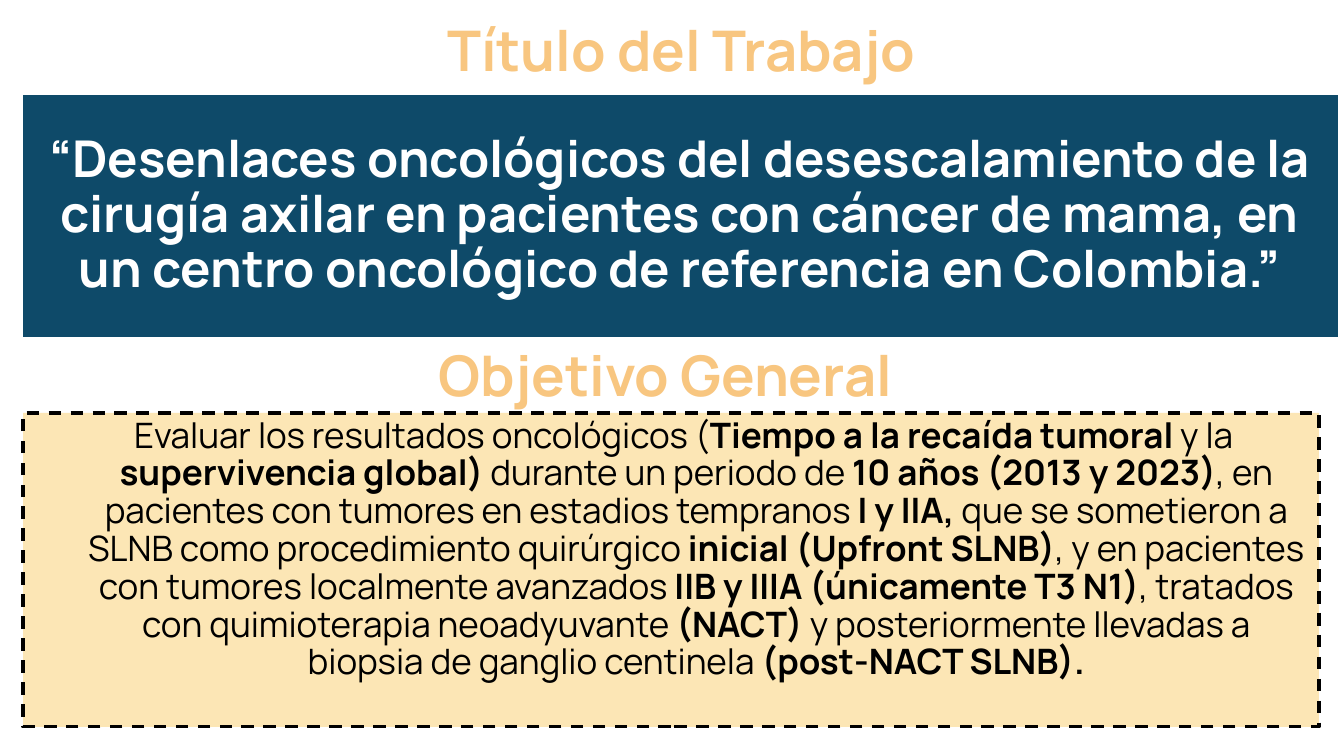
from pptx import Presentation
from pptx.dml.color import RGBColor
from pptx.enum.dml import MSO_LINE
from pptx.enum.shapes import MSO_SHAPE
from pptx.enum.text import MSO_ANCHOR, MSO_AUTO_SIZE, PP_ALIGN
from pptx.util import Emu, Pt

RECT, DASH = MSO_SHAPE.RECTANGLE, MSO_LINE.DASH
TOP, MIDDLE = MSO_ANCHOR.TOP, MSO_ANCHOR.MIDDLE
LEFT, CENTER = PP_ALIGN.LEFT, PP_ALIGN.CENTER
NO_FIT = MSO_AUTO_SIZE.NONE

FONT = "Manrope"
COLORS = {"navy": "0E4A69", "cream": "FCE6B5", "gold": "F8C680",
          "black": "000000", "white": "FFFFFF"}

TITLE = ("“Desenlaces oncológicos del desescalamiento de la cirugía axilar en pacientes "
         "con cáncer de mama, en un centro oncológico de referencia en Colombia.”")
TITLE_BOX = (23, 95, 1315, 242)

# Regular and bold runs alternate, starting with regular
OBJECTIVE = [
    "Evaluar los resultados oncológicos (", "Tiempo a la recaída tumoral",
    " y la", " supervivencia global)",
    " durante un periodo de ", "10 años (2013 y 2023)",
    ", en pacientes con tumores en estadios tempranos", " I y IIA, ",
    "que se sometieron a SLNB como procedimiento quirúrgico", " inicial (Upfront SLNB)",
    ", y en pacientes con tumores localmente avanzados", " IIB y IIIA (únicamente T3 N1)",
    ", tratados con quimioterapia neoadyuvante", " (NACT)",
    " y posteriormente llevadas a biopsia de ganglio centinela ", "(post-NACT SLNB).",
]
OBJECTIVE_BOX = (23, 413, 1296, 314)

HEADINGS = [  # text, box, alignment
    ("Objetivo General", (429, 338, 668, 82), LEFT),
    ("Título del Trabajo", (347, 13, 668, 82), CENTER),
]


def px(n):
    return Emu(round(n * 914400 / 100.8))


def rgb(name):
    return RGBColor.from_string(COLORS[name])


def fill(sp, color):
    sp.fill.solid()
    sp.fill.fore_color.rgb = rgb(color)


def set_frame(sp, anchor, inset_x, inset_y):
    tf = sp.text_frame
    tf.word_wrap, tf.auto_size, tf.vertical_anchor = True, NO_FIT, anchor
    tf.margin_left = tf.margin_right = px(inset_x)
    tf.margin_top = tf.margin_bottom = px(inset_y)
    return tf


def write(p, texts, size, color, align, bolds):
    p.alignment, p.line_spacing = align, 0.9
    for text, bold in zip(texts, bolds):
        r = p.add_run()
        r.text = text
        r.font.name, r.font.size, r.font.bold = FONT, Pt(size), bold
        r.font.color.rgb = rgb(color)


def main():
    prs = Presentation()
    prs.slide_width, prs.slide_height = px(1344), px(756)
    s = prs.slides.add_slide(prs.slide_layouts[5])

    title = s.shapes.title
    title.left, title.top, title.width, title.height = map(px, TITLE_BOX)
    fill(title, "navy")
    tf = set_frame(title, MIDDLE, 10, 5)
    write(tf.paragraphs[0], [TITLE], 36.2, "white", CENTER, [True])

    panel = s.shapes.add_shape(RECT, *map(px, OBJECTIVE_BOX))
    panel.shadow.inherit = False
    fill(panel, "cream")
    panel.line.color.rgb = rgb("black")
    panel.line.width, panel.line.dash_style = Pt(2.25), DASH
    p = set_frame(panel, TOP, 10, 5).paragraphs[0]
    write(p, OBJECTIVE, 25, "black", CENTER, [False, True] * (len(OBJECTIVE) // 2))
    pPr = p._p.get_or_add_pPr()
    pPr.set("marL", "457200")
    pPr.set("indent", "-228600")

    for text, box, align in HEADINGS:
        heading = s.shapes.add_textbox(*map(px, box))
        tf = set_frame(heading, TOP, 10, 10)
        write(tf.paragraphs[0], [text], 40, "gold", align, [True])

    prs.save("out.pptx")


if __name__ == "__main__":
    main()
